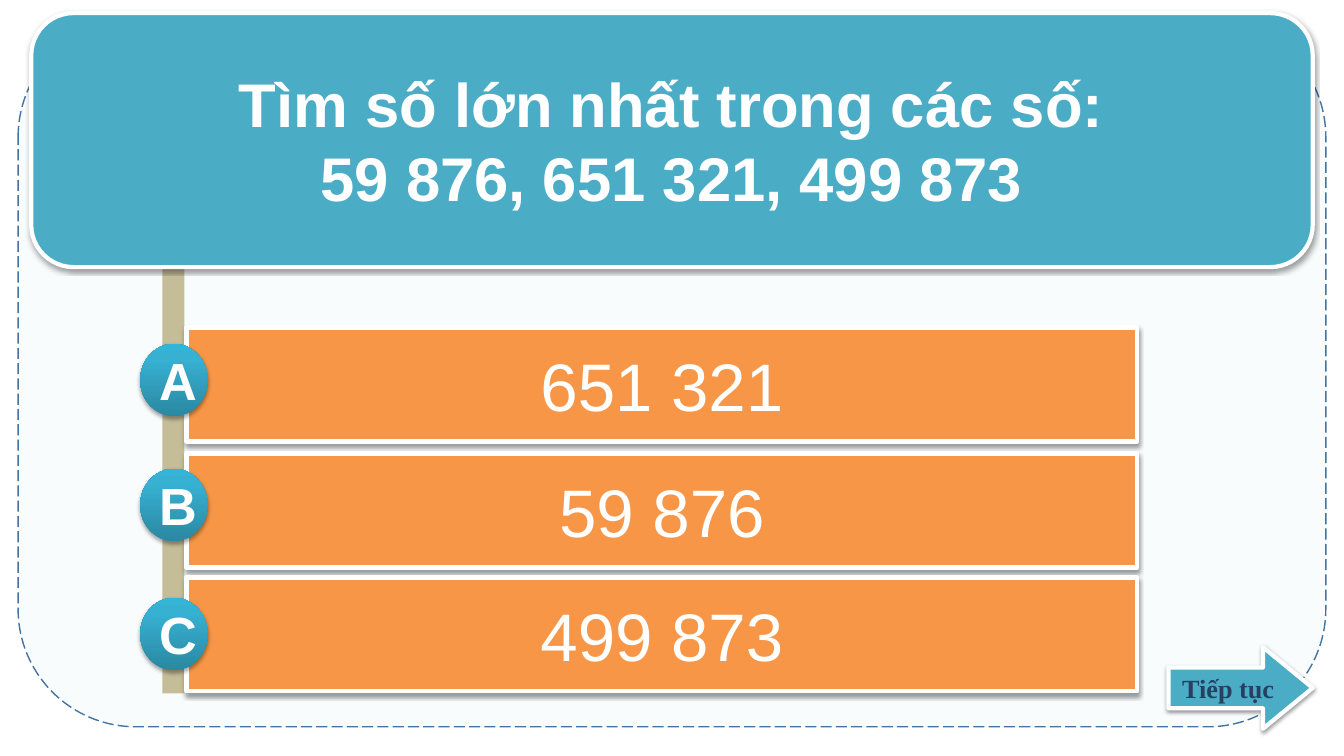
import dataclasses
import typing

import lxml.etree
import pptx
import pptx.dml.color
import pptx.enum.dml
import pptx.enum.shapes
import pptx.enum.text
import pptx.oxml.ns
import pptx.util

KIND = pptx.enum.shapes.MSO_SHAPE
QN = pptx.oxml.ns.qn
WHITE = "FFFFFF"
TEAL = "4BACC6"
BLEND = ((0, "2A88A2"), (80, "37B1D2"), (100, "34B4D6"))


@dataclasses.dataclass
class Label:
    text: str
    size: float
    face: str = "Arial"
    bold: bool = False
    tint: str = WHITE


@dataclasses.dataclass
class Block:
    kind: typing.Any
    box: tuple[float, float, float, float]
    fill: str | tuple
    line: tuple[str, float] | None = None
    dash: typing.Any = None
    shade: tuple[int, float, float] | None = None
    label: Label | None = None
    bends: tuple[float, ...] = ()


class Answer(typing.NamedTuple):
    mark: str
    value: str
    top: float
    dot_top: float


def color(code: str) -> pptx.dml.color.RGBColor:
    return pptx.dml.color.RGBColor.from_string(code)


def apply(target: typing.Any, style: dict[str, typing.Any]) -> None:
    for name, value in style.items():
        setattr(target, name, value)


def add_node(parent: typing.Any, tag: str, **attrs: typing.Any) -> typing.Any:
    pairs = {key: str(value) for key, value in attrs.items()}
    return lxml.etree.SubElement(parent, QN(tag), pairs)


def paint(shape: typing.Any, fill: str | tuple) -> None:
    if isinstance(fill, str):
        shape.fill.solid()
        shape.fill.fore_color.rgb = color(fill)
        return
    shape.fill.gradient()
    shape.fill.gradient_angle = 90
    stops = next(shape.element.iter(QN("a:gsLst")))
    for stop in list(stops):
        stops.remove(stop)
    for place, code in fill:
        stop = add_node(stops, "a:gs", pos=place * 1000)
        add_node(stop, "a:srgbClr", val=code)


def outline(shape: typing.Any, block: Block) -> None:
    if block.line is None:
        shape.line.fill.background()
        return
    code, width = block.line
    shape.line.color.rgb = color(code)
    apply(shape.line, {"width": pptx.util.Pt(width), "dash_style": block.dash})


def cast(shape: typing.Any, shade: tuple[int, float, float] | None) -> None:
    shape.shadow.inherit = False
    if shade is None:
        return
    alpha, blur, drop = shade
    effects = next(shape.element.iter(QN("a:effectLst")))
    outer = add_node(effects, "a:outerShdw", blurRad=pptx.util.Pt(blur),
                     dist=pptx.util.Pt(drop), dir=5400000, rotWithShape=0)
    tone = add_node(outer, "a:srgbClr", val="000000")
    add_node(tone, "a:alpha", val=alpha * 1000)


def write(shape: typing.Any, label: Label) -> None:
    frame = shape.text_frame
    apply(frame, {"text": label.text, "word_wrap": True,
                  "vertical_anchor": pptx.enum.text.MSO_ANCHOR.MIDDLE})
    style = {"name": label.face, "size": pptx.util.Pt(label.size), "bold": label.bold}
    for para in frame.paragraphs:
        para.alignment = pptx.enum.text.PP_ALIGN.CENTER
        for run in para.runs:
            apply(run.font, style)
            run.font.color.rgb = color(label.tint)


def draw(slide: typing.Any, block: Block) -> None:
    box = [pptx.util.Inches(side) for side in block.box]
    shape = slide.shapes.add_shape(block.kind, *box)
    for index, bend in enumerate(block.bends):
        shape.adjustments[index] = bend
    paint(shape, block.fill)
    outline(shape, block)
    cast(shape, block.shade)
    if block.label:
        write(shape, block.label)


def main() -> None:
    deck = pptx.Presentation()
    apply(deck, {"slide_width": pptx.util.Inches(13.33),
                 "slide_height": pptx.util.Inches(7.5)})
    slide = deck.slides.add_slide(deck.slide_layouts[6])

    edge = (WHITE, 3)
    soft = (38, 3.1, 1.6)
    title = Label("Tìm số lớn nhất trong các số:\n59 876, 651 321, 499 873", 44, bold=True)
    blocks = [
        Block(KIND.ROUNDED_RECTANGLE, (0.18, 0.19, 12.97, 7.02), "F8FCFD",
              ("43739E", 1), pptx.enum.dml.MSO_LINE.LONG_DASH),
        Block(KIND.RECTANGLE, (1.61, 2.66, 0.22, 4.22), "C4BD97"),
        Block(KIND.ROUNDED_RECTANGLE, (0.31, 0.13, 12.71, 2.52), TEAL, edge,
              shade=soft, label=title),
    ]
    answers = [
        Answer("A", "651 321", 3.25, 3.41),
        Answer("B", "59 876", 4.5, 4.65),
        Answer("C", "499 873", 5.73, 5.93),
    ]
    for answer in answers:
        blocks += [
            Block(KIND.RECTANGLE, (1.85, answer.top, 9.43, 1.13), "F79646", edge,
                  shade=soft, label=Label(answer.value, 48)),
            Block(KIND.OVAL, (1.39, answer.dot_top, 0.67, 0.72), BLEND,
                  shade=(35, 3.1, 1.8), label=Label(answer.mark, 37.3, bold=True)),
        ]
    blocks.append(
        Block(KIND.RIGHT_ARROW, (11.59, 6.42, 1.43, 0.81), TEAL, edge, shade=soft,
              label=Label("Tiếp tục", 18.7, "Times New Roman", True, "254061"),
              bends=(0.5, 0.61)))
    for block in blocks:
        draw(slide, block)
    deck.save("out.pptx")


if __name__ == "__main__":
    main()
